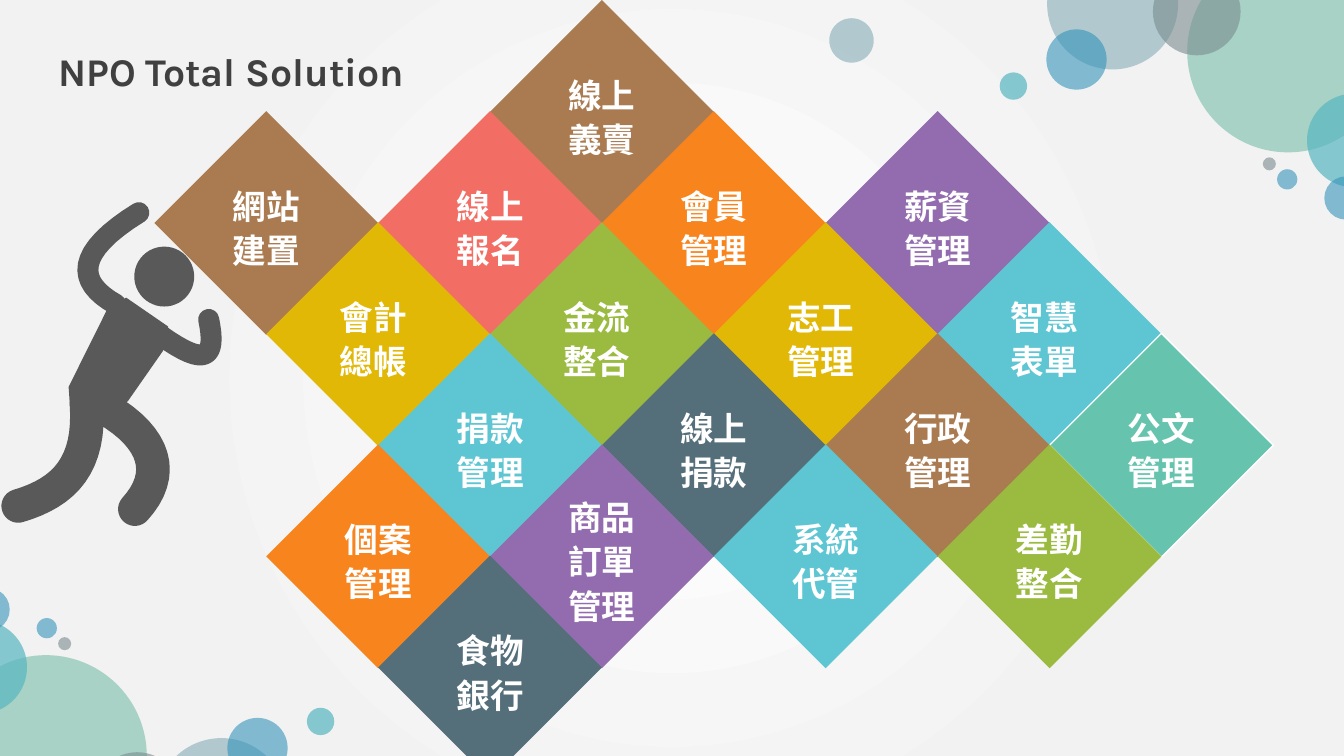
from dataclasses import dataclass
from lxml.etree import SubElement
from pptx import Presentation
from pptx.dml.color import RGBColor
from pptx.enum.shapes import MSO_SHAPE
from pptx.enum.text import MSO_ANCHOR, MSO_AUTO_SIZE, PP_ALIGN
from pptx.oxml import parse_xml
from pptx.oxml.ns import nsdecls, qn
from pptx.util import Cm, Pt


@dataclass(frozen=True)
class Theme:
    ink: str = "404040"
    body: str = "595959"
    white: str = "FFFFFF"
    pale: str = "F2F2F2"
    brown: str = "AA7B51"
    coral: str = "F26D64"
    orange: str = "F8841D"
    purple: str = "936CAF"
    gold: str = "E1B805"
    lime: str = "9BBB40"
    cyan: str = "5EC6D3"
    slate: str = "546E7A"
    mint: str = "66C4AE"
    mist: str = "84ACB6"
    sage: str = "75BDA7"
    gray: str = "7A8C8E"
    blue: str = "3494BA"
    teal: str = "58B6C0"
    head: float = 28
    label: float = 24
    latin: str = "Karla"
    asian: str = "Noto Sans CJK SC"


T = Theme()
HALF, STEP, LEFT = 2.82, 2.8, 3.89  # half a tile, row step, first column

# Each row: first column, then label and colour of every second column
ROWS = [
    (3, [("線上 義賣", T.brown)]),
    (0, [("網站 建置", T.brown), ("線上 報名", T.coral),
         ("會員 管理", T.orange), ("薪資 管理", T.purple)]),
    (1, [("會計 總帳", T.gold), ("金流 整合", T.lime),
         ("志工 管理", T.gold), ("智慧 表單", T.cyan)]),
    (2, [("捐款 管理", T.cyan), ("線上 捐款", T.slate),
         ("行政 管理", T.brown), ("公文 管理", T.mint)]),
    (1, [("個案 管理", T.orange), ("商品 訂單 管理", T.purple),
         ("系統 代管", T.cyan), ("差勤 整合", T.lime)]),
    (2, [("食物 銀行", T.slate)]),
]

# Centre x, centre y, width, colour
DOTS = [
    (28.04, 0.1, 3.3, T.mist), (32.46, 1.3, 5.08, T.sage),
    (30.16, 0.29, 2.21, T.gray), (27.13, 1.5, 1.52, T.blue),
    (34.12, 3.54, 2.36, T.teal), (25.54, 2.17, 0.69, T.teal),
    (33.92, 4.99, 1.09, T.blue), (32.44, 4.52, 0.51, T.blue),
    (31.99, 4.13, 0.33, T.gray),
]
LONE = (21.46, 1.02, 1.12, T.mist)

# Walking figure: stroke width, then start, two handles and end of a limb
LIMBS = [
    (15, (3.5, 5.36), (1.9, 6.35), (1.9, 7.1), (2.92, 7.67)),
    (15, (4.06, 8.46), (5.2, 9.27), (5.46, 9.02), (5.26, 8.05)),
    (24, (2.18, 10.16), (2.29, 11.7), (1.65, 12.4), (0.46, 12.75)),
    (24, (2.67, 10.3), (3.94, 11.05), (4.2, 11.95), (3.4, 12.83)),
]
TORSO = [(2.69, 7.82), (3.18, 7.5), (4.24, 8.23), (4.11, 8.84),
         (3.23, 10.1), (2.62, 10.7), (1.78, 10.46), (1.73, 9.75)]


def apply(item, form):
    for key, val in form.items():
        setattr(item, key, val)


def style(run, size, color, face):
    apply(run.font, {"size": Pt(size), "bold": True, "name": face})
    run.font.color.rgb = RGBColor.from_string(color)
    SubElement(run.font._element, qn("a:ea"), typeface=face)


def paint(shape, color):
    shape.shadow.inherit = False
    shape.fill.solid()
    shape.fill.fore_color.rgb = RGBColor.from_string(color)
    shape.line.fill.background()


def edge(shape, color, width):
    shape.line.color.rgb = RGBColor.from_string(color)
    shape.line.width = Pt(width)


def dot(slide, x, y, size, color):
    shape = slide.shapes.add_shape(
        MSO_SHAPE.OVAL, Cm(x - size / 2), Cm(y - size / 2), Cm(size), Cm(size))
    paint(shape, color)
    return shape


def bubble(slide, x, y, size, color):
    shape = dot(slide, x, y, size, color)
    tint = shape._element.spPr.find(qn("a:solidFill"))[0]
    SubElement(tint, qn("a:alpha"), val="70000" if color == T.teal else "60000")


def tile(slide, row, col, label, color):
    shape = slide.shapes.add_shape(
        MSO_SHAPE.DIAMOND, Cm(LEFT + HALF * col), Cm(STEP * row),
        Cm(2 * HALF), Cm(2 * HALF))
    paint(shape, color)
    if color == T.mint:
        edge(shape, T.white, 1)
    frame = shape.text_frame
    # Labels of the third row sit slightly to the left
    apply(frame, {
        "margin_left": 0, "margin_right": Cm(0.25 if row == 2 else 0),
        "margin_top": Cm(0.15), "margin_bottom": 0,
        "word_wrap": False, "vertical_anchor": MSO_ANCHOR.MIDDLE})
    for i, line in enumerate(label.split()):
        para = frame.add_paragraph() if i else frame.paragraphs[0]
        apply(para, {"alignment": PP_ALIGN.CENTER, "line_spacing": 1.1})
        run = para.add_run()
        run.text = line
        style(run, T.label, T.white, T.asian)


def outline(slide, points, close):
    first, *rest = [(Cm(x), Cm(y)) for x, y in points]
    pen = slide.shapes.build_freeform(*first)
    pen.add_line_segments(rest, close=close)
    shape = pen.convert_to_shape()
    paint(shape, T.body)
    return shape


def curve(a, b, c, d, steps=16):
    for i in range(steps + 1):
        t = i / steps
        u = 1 - t
        yield tuple(u**3 * p + 3 * u * u * t * q + 3 * u * t * t * r + t**3 * s
                    for p, q, r, s in zip(a, b, c, d))


def person(slide):
    dot(slide, 4.14, 6.97, 1.51, T.body)
    outline(slide, TORSO, True)
    for width, *ends in LIMBS:
        limb = outline(slide, curve(*ends), False)
        limb.fill.background()
        edge(limb, T.body, width)
        line = limb.line._get_or_add_ln()
        line.set("cap", "rnd")
        SubElement(line, qn("a:round"))


def title(slide, text):
    shape = slide.shapes.title
    apply(shape, {"left": Cm(1.22), "top": Cm(0.71),
                  "width": Cm(29.62), "height": Cm(1.12)})
    frame = shape.text_frame
    apply(frame, {"word_wrap": True, "auto_size": MSO_AUTO_SIZE.NONE,
                  "vertical_anchor": MSO_ANCHOR.TOP})
    para = frame.paragraphs[0]
    apply(para, {"alignment": PP_ALIGN.LEFT, "line_spacing": 1.3,
                 "space_before": Pt(10)})
    run = para.add_run()
    run.text = text
    style(run, T.head, T.ink, T.latin)


def glow(slide):
    slide.background.fill.solid()
    old = slide._element.cSld.find(".//" + qn("a:solidFill"))
    stops = "".join(
        f'<a:gs pos="{pos}"><a:srgbClr val="{color}"/></a:gs>'
        for pos, color in ((0, T.white), (67000, T.pale), (100000, T.pale)))
    old.getparent().replace(old, parse_xml(
        f'<a:gradFill {nsdecls("a")} rotWithShape="1"><a:gsLst>{stops}</a:gsLst>'
        '<a:path path="circle"><a:fillToRect l="50000" t="50000" r="50000" '
        'b="50000"/></a:path></a:gradFill>'))


def main():
    deck = Presentation()
    apply(deck, {"slide_width": Cm(33.87), "slide_height": Cm(19.05)})
    slide = deck.slides.add_slide(deck.slide_layouts[5])
    glow(slide)
    # Bubbles at top right, and turned half round at bottom left
    for x, y, *look in DOTS + [LONE]:
        bubble(slide, x, y, *look)
    for x, y, *look in DOTS:
        bubble(slide, 33.62 - x, 20.35 - y, *look)
    title(slide, "NPO Total Solution")
    person(slide)
    # Diamond wall
    for row, (start, cells) in enumerate(ROWS):
        for i, cell in enumerate(cells):
            tile(slide, row, start + 2 * i, *cell)
    deck.save("out.pptx")


if __name__ == "__main__":
    main()
